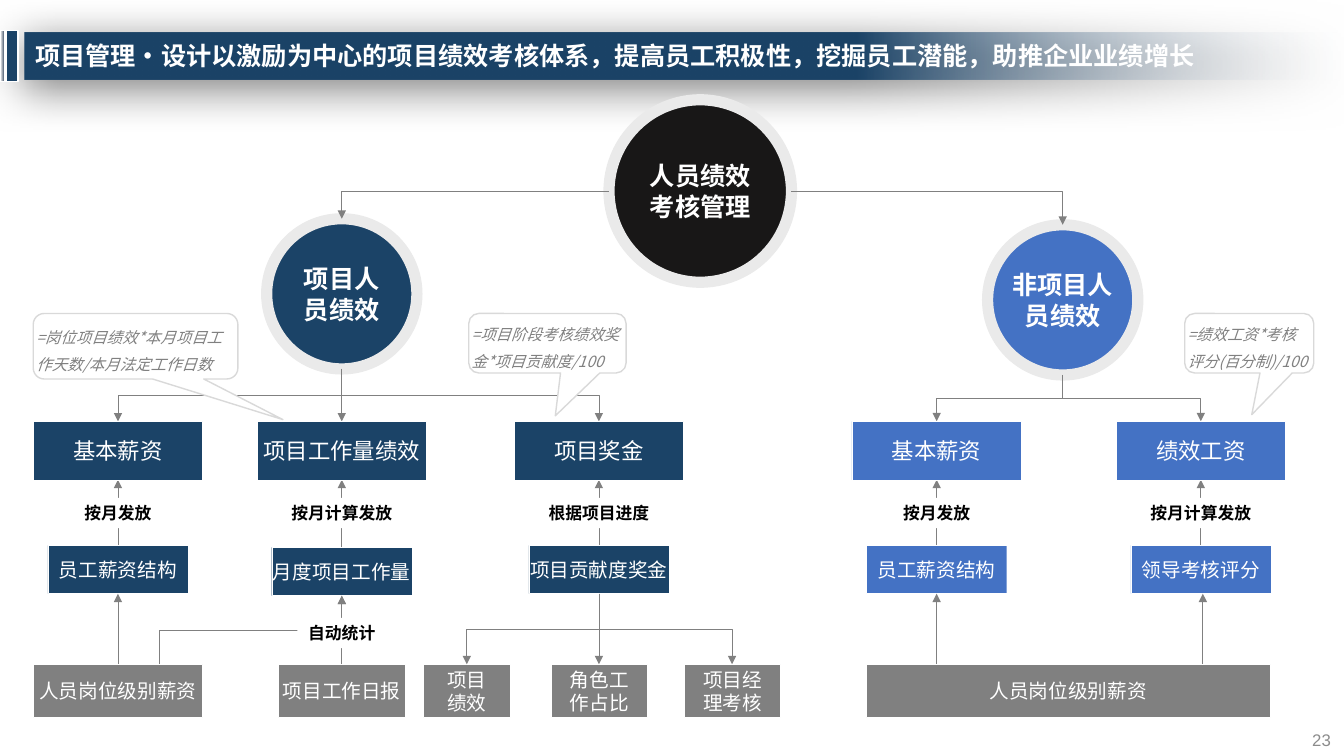
from lxml.etree import SubElement
from pptx import Presentation
from pptx.dml.color import RGBColor
from pptx.enum.shapes import MSO_CONNECTOR as Connector, MSO_SHAPE as Shape
from pptx.enum.text import MSO_ANCHOR as Anchor, PP_ALIGN as Align
from pptx.oxml.ns import qn
from pptx.util import Pt

PX = 9144
FONT = "Noto Sans CJK SC"
NAVY = RGBColor(0x1B, 0x43, 0x67)
BLUE = RGBColor(0x44, 0x72, 0xC4)
GRAY = RGBColor(0x80, 0x80, 0x80)
INK = RGBColor(0x18, 0x17, 0x17)
SLATE = RGBColor(0x44, 0x54, 0x6A)
RING = RGBColor(0xEA, 0xEA, 0xEA)
EDGE = RGBColor(0xD9, 0xD9, 0xD9)
MIST = RGBColor(0xF2, 0xF2, 0xF2)
FADE = RGBColor(0xF6, 0xF8, 0xFC)
NUMBER = RGBColor(0x8C, 0x8C, 0x8C)
WHITE = RGBColor(0xFF, 0xFF, 0xFF)
BLACK = RGBColor(0, 0, 0)


def px(*lengths):
    return [round(length * PX) for length in lengths]


def write(shape, text, size, color, align=Align.CENTER, insets=(10, 5),
          wrap=True, spacing=1.0, font_name=FONT, **styles):
    frame = shape.text_frame
    across, down = px(*insets)
    frame_format = {"word_wrap": wrap, "vertical_anchor": Anchor.MIDDLE,
                    "margin_left": across, "margin_right": across,
                    "margin_top": down, "margin_bottom": down}
    for name, value in frame_format.items():
        setattr(frame, name, value)
    font_format = {"name": font_name, "size": Pt(size), **styles}
    for index, line in enumerate(text.split("\n")):
        paragraph = frame.add_paragraph() if index else frame.paragraphs[0]
        paragraph.alignment = align
        paragraph.line_spacing = spacing
        run = paragraph.add_run()
        run.text = line
        for name, value in font_format.items():
            setattr(run.font, name, value)
        run.font.color.rgb = color
        SubElement(run.font._element, qn("a:ea"), typeface=font_name)


def add_block(slide, kind, box, fill=None, line=None, width=1):
    shape = slide.shapes.add_shape(kind, *px(*box))
    shape.shadow.inherit = False
    if fill is not None:
        shape.fill.solid()
        shape.fill.fore_color.rgb = fill
    if line is None:
        shape.line.fill.background()
    else:
        shape.line.color.rgb = line
        shape.line.width = Pt(width)
    return shape


def add_gradient(shape, *stops):
    shape.fill.gradient()
    shape.fill.gradient_angle = 0
    for stop, (position, color) in zip(shape.fill.gradient_stops, stops):
        stop.position = position
        stop.color.rgb = color


def add_circle(slide, center, top, diameter, text, fill):
    box = (center - diameter / 2, top, diameter, diameter)
    circle = add_block(slide, Shape.OVAL, box, fill, RING, 8)
    write(circle, text, 18, WHITE, insets=(0, 16), bold=True)


def add_card(slide, box, text, size, fill):
    card = add_block(slide, Shape.RECTANGLE, box, fill, WHITE, 0.25)
    write(card, text, size, WHITE, insets=(23, 11), wrap=False)


def add_label(slide, center, top, text):
    width = 17 * len(text) + 20
    label = add_block(slide, Shape.RECTANGLE, (center - width / 2, top, width, 30), WHITE)
    write(label, text, 12, BLACK, wrap=False, bold=True)


def add_callout(slide, box, tip, text):
    callout = add_block(slide, Shape.ROUNDED_RECTANGULAR_CALLOUT, box, WHITE, EDGE)
    for index, value in enumerate(tip):
        callout.adjustments[index] = value
    write(callout, text, 11, GRAY, align=Align.LEFT, insets=(0, 5),
          spacing=1.5, italic=True)


def add_arrow(slide, start, end, kind=Connector.STRAIGHT):
    arrow = slide.shapes.add_connector(kind, *px(*start, *end))
    arrow.line.color.rgb = GRAY
    arrow.line.width = Pt(0.5)
    SubElement(arrow.line._get_or_add_ln(), qn("a:tailEnd"), type="triangle")
    SubElement(arrow._element.spPr, qn("a:effectLst"))
    return arrow


def add_corner(slide, start, end):
    arrow = add_arrow(slide, start, end, Connector.ELBOW)
    arrow._element.spPr.find(qn("a:prstGeom")).set("prst", "bentConnector2")


def add_drop(slide, start, end):
    if start[0] == end[0]:
        add_arrow(slide, start, end)
        return
    middle_x, middle_y = (start[0] + end[0]) / 2, (start[1] + end[1]) / 2
    half_x, half_y = (end[0] - start[0]) / 2, (end[1] - start[1]) / 2
    arrow = add_arrow(slide, (middle_x - half_y, middle_y + half_x),
                      (middle_x + half_y, middle_y - half_x), Connector.ELBOW)
    arrow._element.spPr.find(qn("a:xfrm")).set("rot", "5400000")


def draw_header(slide, box):
    left, top, width, height = box
    bar = add_block(slide, Shape.RECTANGLE, (left + 24, top + 2, width - 24, 47))
    add_gradient(bar, (0.63, NAVY), (1, FADE))
    colors = bar._element.spPr.findall(".//" + qn("a:srgbClr"))
    SubElement(colors[-1], qn("a:alpha"), val="0")
    effects = bar._element.spPr.find(qn("a:effectLst"))
    shadow = SubElement(effects, qn("a:outerShdw"), blurRad=str(Pt(31)), dist=str(Pt(6)),
                        dir=str(97 * 60000), algn="t", rotWithShape="0")
    shade = SubElement(shadow, qn("a:srgbClr"), val="000000")
    SubElement(shade, qn("a:alpha"), val="50000")
    add_block(slide, Shape.RECTANGLE, (left + 6, top, 12, height), NAVY, WHITE)
    strip = add_block(slide, Shape.RECTANGLE, (left, top, 5, height), line=WHITE)
    add_gradient(strip, (0.12, MIST), (0.87, SLATE))
    title = slide.shapes.add_textbox(*px(left + 25, top + 4, 1220, 46))
    write(title, "项目管理·设计以激励为中心的项目绩效考核体系，提高员工积极性，挖掘员工潜能，助推企业业绩增长",
          18, WHITE, align=Align.LEFT, spacing=0.9, bold=True)


def draw_branch(slide, box, hub, hub_text, fill, columns, bases):
    left, top, width, height = box
    bottom = top + height
    hub_x = left + hub
    add_circle(slide, hub_x, top, 149, hub_text, fill)
    for offset, heading, label, detail, shift in columns:
        center = left + offset
        heading_top, detail_top = bottom - 294, bottom - 171 + shift
        add_drop(slide, (hub_x, top + 149), (center, heading_top))
        add_arrow(slide, (center, detail_top), (center, heading_top + 58))
        add_card(slide, (center - 84, heading_top, 168, 58), heading, 16, fill)
        add_card(slide, (center - 69.5, detail_top, 139, 48), detail, 14, fill)
        add_label(slide, center, bottom - 218, label)
    for offset, base_width, text in bases:
        add_card(slide, (left + offset, bottom - 53, base_width, 53), text, 14, GRAY)


def draw_project_branch(slide, box):
    left, top, width, height = box
    bottom = top + height
    salary, workload, bonus = left + 84, left + 306, left + 561
    draw_branch(slide, box, 306, "项目人\n员绩效", NAVY, [
        (84, "基本薪资", "按月发放", "员工薪资结构", 0),
        (306, "项目工作量绩效", "按月计算发放", "月度项目工作量", 2),
        (561, "项目奖金", "根据项目进度", "项目贡献度奖金", 0),
    ], [
        (0, 168, "人员岗位级别薪资"),
        (243, 126, "项目工作日报"),
        (387, 86, "项目\n绩效"),
        (514, 95, "角色工\n作占比"),
        (646, 95, "项目经\n理考核"),
    ])
    base, detail = bottom - 53, bottom - 123
    add_arrow(slide, (salary, base), (salary, detail))
    for start in (workload, left + 125):
        add_drop(slide, (start, base), (workload, detail + 2))
    for end in (left + 430, bonus, left + 693):
        add_drop(slide, (bonus, detail), (end, base))
    add_label(slide, workload, bottom - 99, "自动统计")
    add_callout(slide, (left, top + 94, 203, 65), (0.72, 1.12),
                "=岗位项目绩效*本月项目工作天数/本月法定工作日数")
    add_callout(slide, (left + 432, top + 94, 156, 59), (0.05, 1.22),
                "=项目阶段考核绩效奖金*项目贡献度/100")


def draw_support_branch(slide, box):
    left, top, width, height = box
    bottom = top + height
    draw_branch(slide, box, 209, "非项目人员绩效", BLUE, [
        (84, "基本薪资", "按月发放", "员工薪资结构", 0),
        (346, "绩效工资", "按月计算发放", "领导考核评分", 0),
    ], [(14, 401, "人员岗位级别薪资")])
    for offset in (84, 348):
        add_arrow(slide, (left + offset, bottom - 53), (left + offset, bottom - 123))
    add_callout(slide, (left + 330, top + 88, 128, 59), (0.02, 1.2),
                "=绩效工资*考核评分(百分制)/100")


def draw_root(slide, box, project_hub, support_hub):
    left, top, width, height = box
    middle = top + height / 2
    add_circle(slide, left + width / 2, top, width, "人员绩效\n考核管理", INK)
    add_corner(slide, (left, middle), project_hub)
    add_corner(slide, (left + width, middle), support_hub)


def draw_page_number(slide, box):
    number = slide.shapes.add_textbox(*px(*box))
    write(number, "23", 12, NUMBER, align=Align.RIGHT, insets=(13, 7), font_name="Arial")


def main():
    presentation = Presentation()
    presentation.slide_width, presentation.slide_height = px(1333, 750)
    slide = presentation.slides.add_slide(presentation.slide_layouts[6])
    draw_header(slide, (0, 30, 1333, 51))
    draw_page_number(slide, (1265, 717, 68, 34))
    draw_project_branch(slide, (33, 217, 741, 495))
    draw_support_branch(slide, (845, 223, 430, 489))
    draw_root(slide, (604, 99, 181, 181), (339, 217), (1054, 223))
    presentation.save("out.pptx")


if __name__ == "__main__":
    main()
